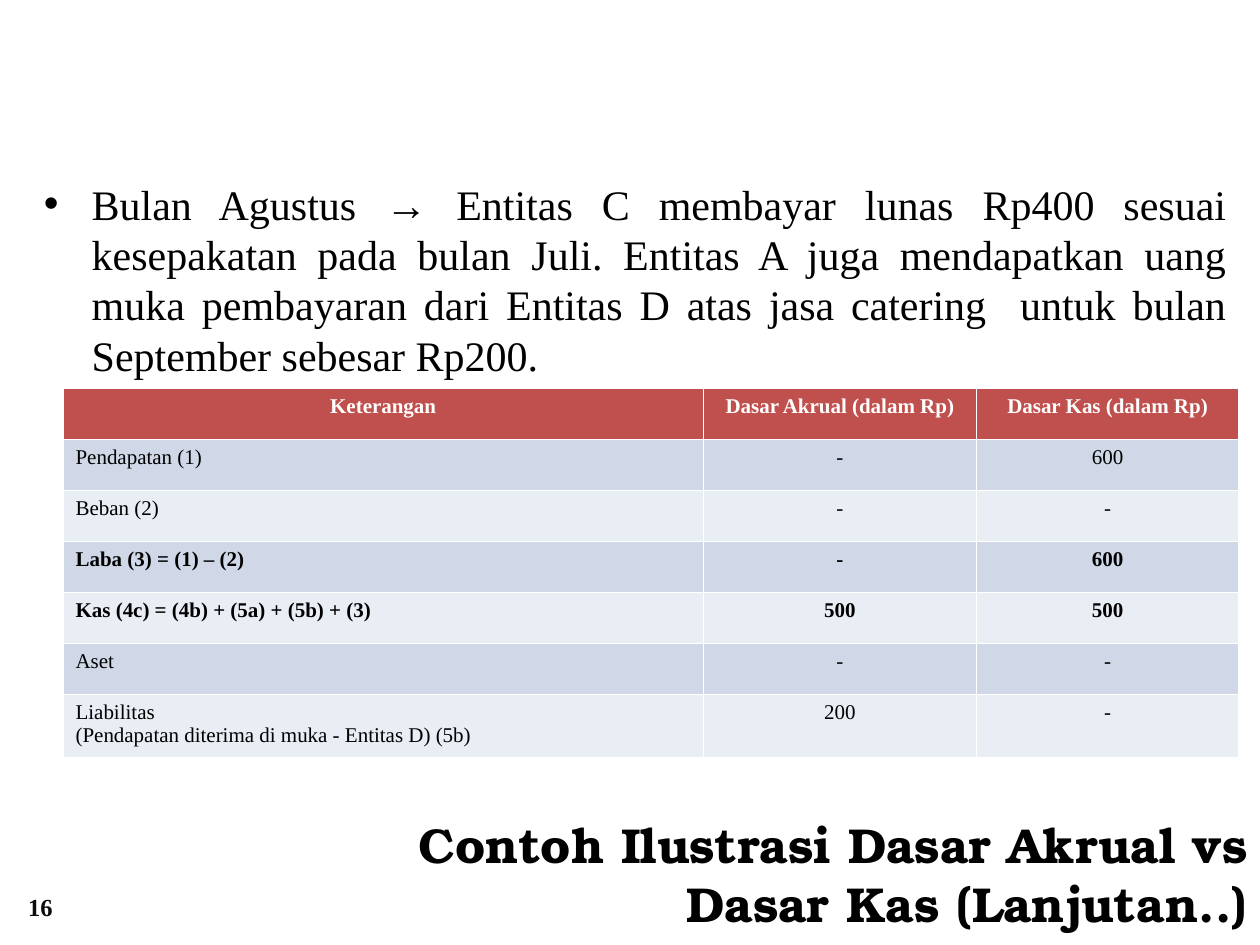
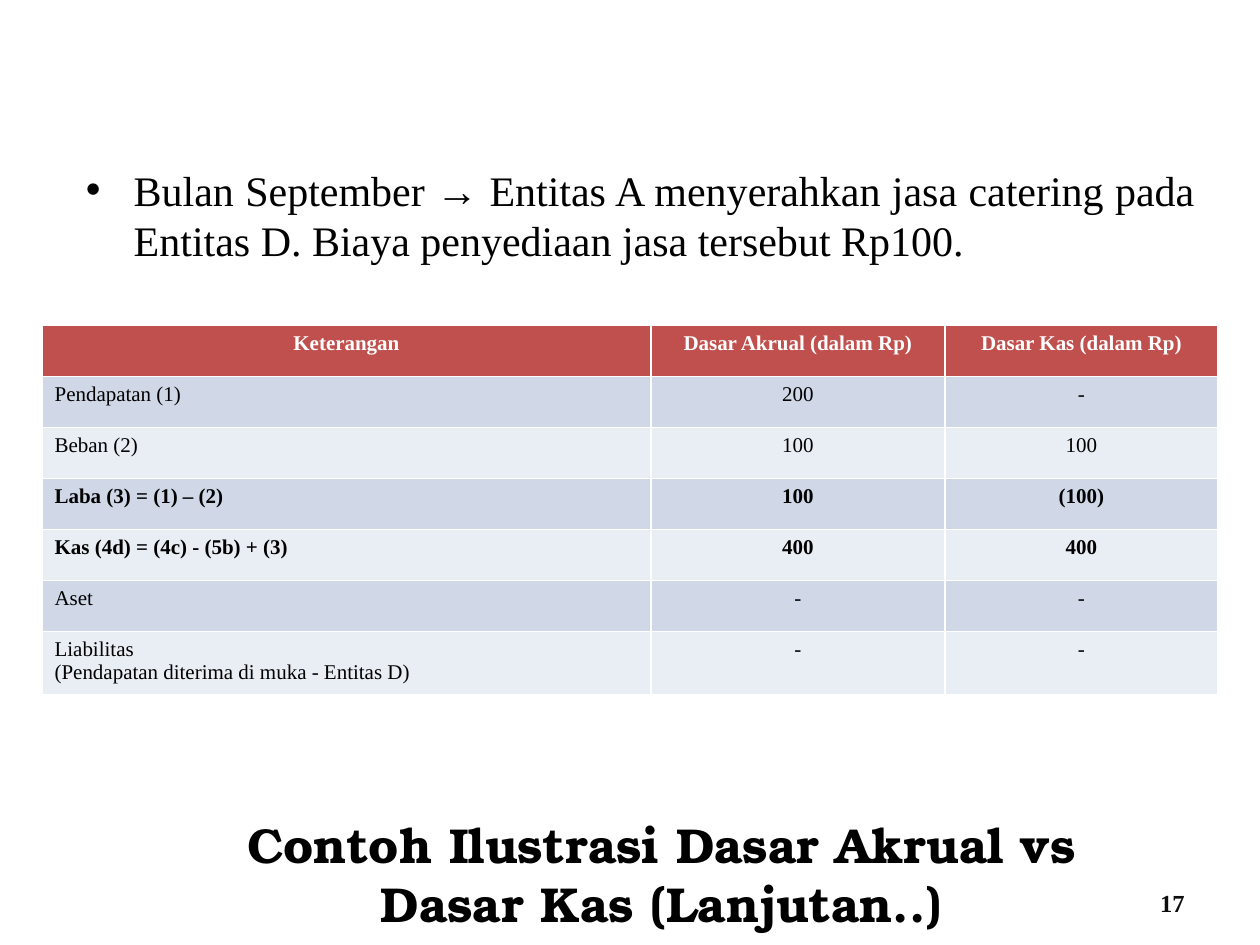
from dataclasses import dataclass

from lxml import etree
from pptx import Presentation
from pptx import util as u
from pptx.dml.color import RGBColor
from pptx.enum import text
from pptx.oxml.ns import qn

ALIGN = text.PP_ALIGN
ANCHOR = text.MSO_ANCHOR


@dataclass(frozen=True)
class Theme:
    serif: str = "Times New Roman"
    display: str = "TeX Gyre Bonum"
    black: str = "000000"
    number: str = "0D0D0D"
    white: str = "FFFFFF"
    header: str = "C0504D"
    bands: tuple = ("D0D8E8", "E9EDF4")
    title_size: int = 28
    body_size: int = 24
    number_size: int = 14
    table_size: int = 12


THEME = Theme()
SLIDE_WIDTH, SLIDE_HEIGHT = u.Inches(10), u.Inches(7.5)
GRID_COLUMNS = 120
UNIT = SLIDE_WIDTH / GRID_COLUMNS
TABLE_ROW = 4.86
BOLD_ROWS = (0, 3, 4)
TITLE = "Contoh Ilustrasi Dasar Akrual vs Dasar Kas (Lanjutan..)"
HEADINGS = ("Keterangan", "Dasar Akrual (dalam Rp)", "Dasar Kas (dalam Rp)")


def grid(*cells):
    return [u.Emu(round(cell * UNIT)) for cell in cells]


def style(para, size, color, font=THEME.serif, bold=False, align=ALIGN.LEFT):
    para.alignment = align
    for span in para.runs:
        span.font.name = font
        span.font.size = u.Pt(size)
        span.font.bold = bold
        span.font.color.rgb = RGBColor.from_string(color)


def add_text(page, area, words, anchor=ANCHOR.TOP, **look):
    box = page.shapes.add_textbox(*grid(*area))
    frame = box.text_frame
    frame.word_wrap = True
    frame.vertical_anchor = anchor
    frame.text = words
    style(frame.paragraphs[0], **look)
    return frame


def add_title(page, area, align):
    add_text(page, area, TITLE, ANCHOR.MIDDLE, size=THEME.title_size,
             color=THEME.black, font=THEME.display, bold=True, align=align)


def add_page_number(page, area, number):
    add_text(page, area, number, ANCHOR.MIDDLE, size=THEME.number_size,
             color=THEME.number, bold=True, align=ALIGN.RIGHT)


def add_bullet(page, area, words):
    frame = add_text(page, area, words, size=THEME.body_size,
                     color=THEME.black, align=ALIGN.JUSTIFY)
    frame.margin_top = u.Inches(0.08)
    para = frame.paragraphs[0]
    para.line_spacing = u.Pt(1.2 * THEME.body_size)
    properties = para._p.get_or_add_pPr()
    indent = u.Inches(0.38)
    properties.set("marL", str(indent))
    properties.set("indent", str(-indent))
    etree.SubElement(properties, qn("a:buFont")).set("typeface", "Arial")
    etree.SubElement(properties, qn("a:buChar")).set("char", "•")


def add_ledger(page, left, top, widths, entries):
    rows = (HEADINGS, *entries)
    area = grid(left, top, sum(widths), TABLE_ROW * len(rows))
    table = page.shapes.add_table(len(rows), len(widths), *area).table
    for column, width in zip(table.columns, grid(*widths)):
        column.width = width
    for row_index, row in enumerate(rows):
        table.rows[row_index].height = grid(TABLE_ROW)[0]
        is_header = row_index == 0
        fill = THEME.header if is_header else THEME.bands[(row_index - 1) % 2]
        for column_index, words in enumerate(row):
            cell = table.cell(row_index, column_index)
            cell.fill.solid()
            cell.fill.fore_color.rgb = RGBColor.from_string(fill)
            cell.text_frame.text = words
            is_label = column_index == 0 and not is_header
            for para in cell.text_frame.paragraphs:
                style(para, THEME.table_size,
                      THEME.white if is_header else THEME.black,
                      bold=row_index in BOLD_ROWS,
                      align=ALIGN.LEFT if is_label else ALIGN.CENTER)


def ledger_entries(cash_formula, liability, accrual, cash):
    labels = ("Pendapatan (1)", "Beban (2)", "Laba (3) = (1) – (2)",
              cash_formula, "Aset", "Liabilitas\n" + liability)
    return tuple(zip(labels, accrual, cash))


def add_august(deck):
    page = deck.slides.add_slide(deck.slide_layouts[6])
    add_bullet(page, (3, 16, 115, 56.3),
               "Bulan Agustus → Entitas C membayar lunas Rp400 sesuai "
               "kesepakatan pada bulan Juli. Entitas A juga mendapatkan uang "
               "muka pembayaran dari Entitas D atas jasa catering  untuk bulan "
               "September sebesar Rp200.")
    add_page_number(page, (-1, 84, 7.2, 4.8), "16")
    add_title(page, (36, 78, 84, 10.4), ALIGN.RIGHT)
    add_ledger(page, 6, 37, (61, 26, 25), ledger_entries(
        "Kas (4c) = (4b) + (5a) + (5b) + (3)",
        "(Pendapatan diterima di muka - Entitas D) (5b)",
        ("-", "-", "-", "500", "-", "200"),
        ("600", "-", "600", "500", "-", "-")))


def add_september(deck):
    page = deck.slides.add_slide(deck.slide_layouts[6])
    add_bullet(page, (7, 14.67, 108, 56.3),
               "Bulan September → Entitas A menyerahkan jasa catering pada "
               "Entitas D. Biaya penyediaan jasa tersebut Rp100.")
    add_page_number(page, (106.8, 83.6, 7.2, 4.8), "17")
    add_title(page, (21, 78, 84, 10.4), ALIGN.CENTER)
    add_ledger(page, 4, 31, (58, 28, 26), ledger_entries(
        "Kas (4d) = (4c) - (5b) + (3)",
        "(Pendapatan diterima di muka - Entitas D)",
        ("200", "100", "100", "400", "-", "-"),
        ("-", "100", "(100)", "400", "-", "-")))


def main():
    deck = Presentation()
    deck.slide_width, deck.slide_height = SLIDE_WIDTH, SLIDE_HEIGHT
    add_august(deck)
    add_september(deck)
    deck.save("out.pptx")


if __name__ == "__main__":
    main()
